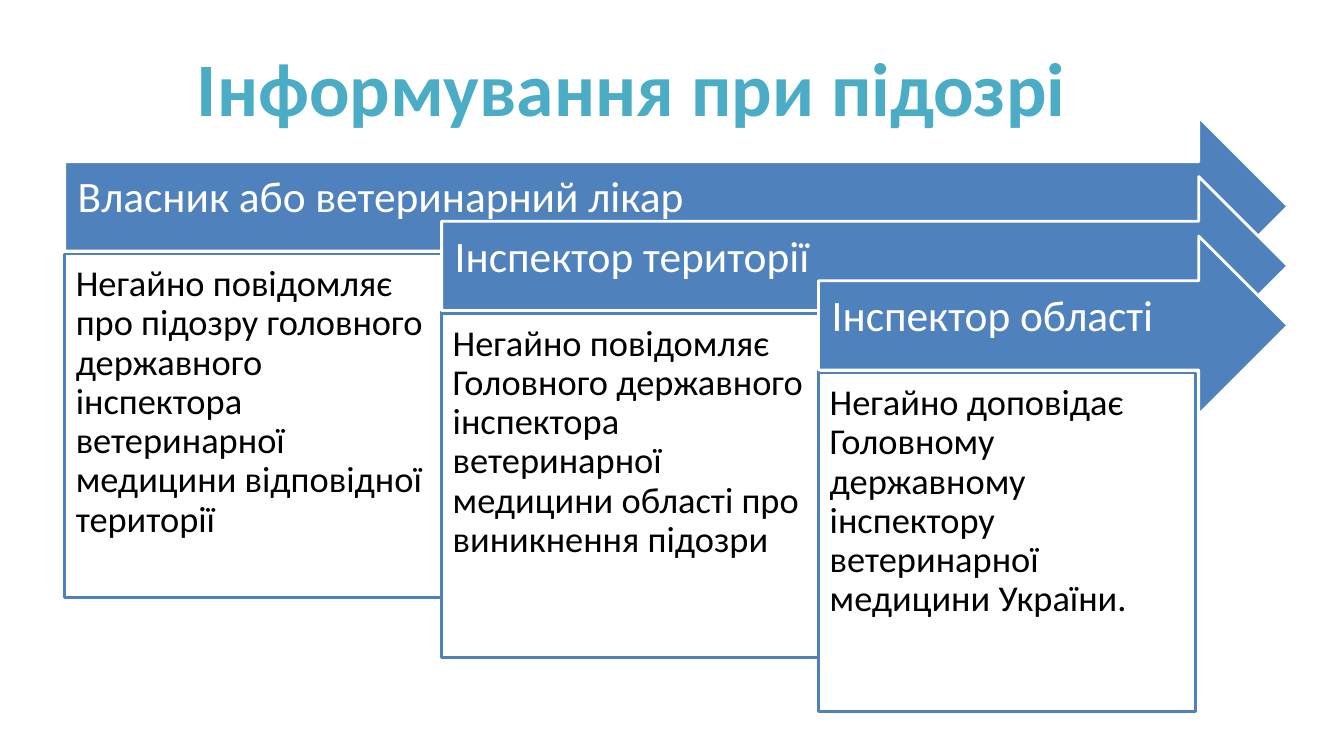
from pptx import Presentation
from pptx.dml.color import RGBColor
from pptx.enum.shapes import MSO_SHAPE
from pptx.enum.text import MSO_ANCHOR, PP_ALIGN
from pptx.util import Cm, Pt

ARROW, RECTANGLE = MSO_SHAPE.RIGHT_ARROW, MSO_SHAPE.RECTANGLE
TOP, MIDDLE = MSO_ANCHOR.TOP, MSO_ANCHOR.MIDDLE
LEFT, CENTER = PP_ALIGN.LEFT, PP_ALIGN.CENTER

FONT = "Calibri"
BLUE, TEAL, WHITE, BLACK = "4F81BD", "4BACC6", "FFFFFF", "000000"

FIRST_LEFT, FIRST_TOP = 1.63, 2.95
STEP_RIGHT, STEP_DOWN = 9.5, 1.5
ARROW_TIP, ARROW_HEIGHT = 32.46, 4.5
DUTY_OFFSET = 3.45

STAGES = [
    ("Власник або ветеринарний лікар",
     "Негайно повідомляє про підозру головного державного інспектора "
     "ветеринарної медицини відповідної території", 8.66),
    ("Інспектор території",
     "Негайно повідомляє Головного державного інспектора "
     "ветеринарної медицини області про виникнення підозри", 8.66),
    ("Інспектор області",
     "Негайно доповідає Головному державному інспектору "
     "ветеринарної медицини України.", 8.53),
]


def color(value):
    """Turn a hex string into a colour."""
    return RGBColor.from_string(value)


def write(box, text, size, ink, insets, anchor=TOP, align=LEFT, bold=False):
    """Fill a shape with one formatted paragraph."""
    frame = box.text_frame
    frame.text = text
    frame.vertical_anchor = anchor
    (frame.margin_left, frame.margin_top,
     frame.margin_right, frame.margin_bottom) = map(Cm, insets)
    para = frame.paragraphs[0]
    para.alignment = align
    span = para.runs[0]
    span.font.name = FONT
    span.font.size = Pt(size)
    span.font.bold = bold
    span.font.color.rgb = color(ink)
    return para


def add_panel(page, kind, place, fill, line):
    """Draw a filled and outlined shape."""
    panel = page.shapes.add_shape(kind, *map(Cm, place))
    panel.shadow.inherit = False
    panel.fill.solid()
    panel.fill.fore_color.rgb = color(fill)
    panel.line.color.rgb = color(line)
    panel.line.width = Pt(2)
    panel.text_frame.word_wrap = True
    return panel


def add_stage(page, index, role, duty, duty_height):
    """Draw one arrow with the duty box below it."""
    left = FIRST_LEFT + index * STEP_RIGHT
    top = FIRST_TOP + index * STEP_DOWN
    arrow = add_panel(page, ARROW, (left, top, ARROW_TIP - left, ARROW_HEIGHT),
                      BLUE, WHITE)
    heading = write(arrow, role, 31, WHITE, (0.33, 0.33, 0.71, 0.71), MIDDLE)
    box = add_panel(page, RECTANGLE,
                    (left, top + DUTY_OFFSET, STEP_RIGHT, duty_height),
                    WHITE, BLUE)
    body = write(box, duty, 26, BLACK, (0.28, 0.28, 0.28, 0.28))
    for para in (heading, body):
        para.line_spacing = 0.9


def add_title(page, text):
    """Place the slide heading."""
    box = page.shapes.add_textbox(Cm(4.6), Cm(0.89), Cm(22.63), Cm(2.57))
    box.text_frame.word_wrap = False
    write(box, text, 54, TEAL, (0.25, 0.13, 0.25, 0.13),
          align=CENTER, bold=True)


def main():
    """Build and save the deck."""
    deck = Presentation()
    deck.slide_width, deck.slide_height = Cm(33.87), Cm(19.05)
    page = deck.slides.add_slide(deck.slide_layouts[6])
    for index, stage in enumerate(STAGES):
        add_stage(page, index, *stage)
    add_title(page, "Інформування при підозрі")
    deck.save("out.pptx")


if __name__ == "__main__":
    main()
